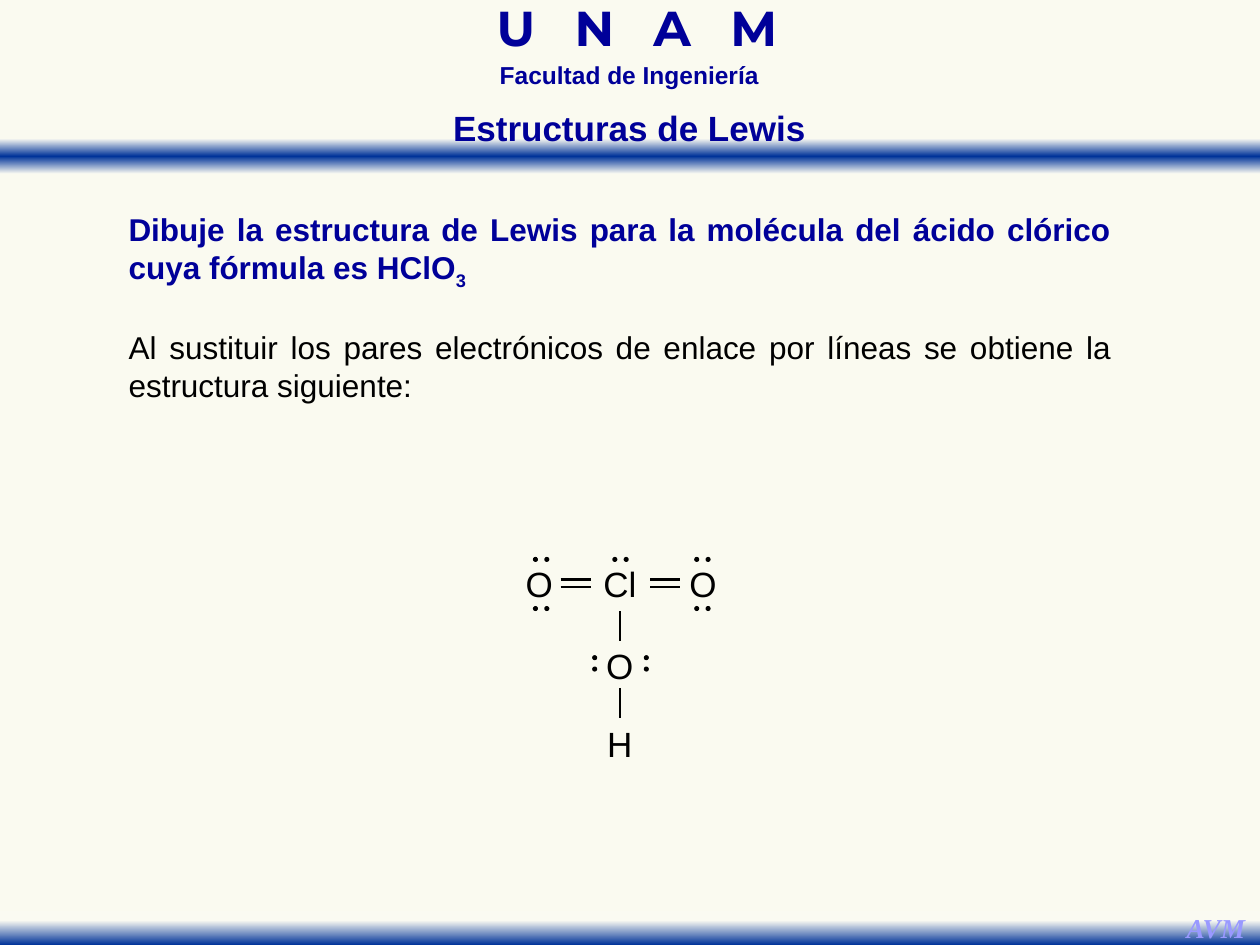
"""Build the Lewis structure slide for chloric acid."""
from dataclasses import dataclass
from typing import NamedTuple

from lxml import etree
from pptx import Presentation
from pptx import oxml
from pptx.dml.color import RGBColor
from pptx.enum import shapes, text
from pptx.oxml import ns
from pptx.util import Inches, Pt


@dataclass(frozen=True)
class Theme:
    paper: str = "FAFAF0"
    pale: str = "FAFAF2"
    blue: str = "003399"
    navy: str = "000099"
    lilac: str = "9999FF"
    ink: str = "000000"
    sans: str = "Arial"
    logo: str = "Montserrat"
    serif: str = "Times New Roman"
    big: float = 28
    head: float = 20
    body: float = 18
    small: float = 14
    sign: float = 15.6
    line: float = 1.5


class Box(NamedTuple):
    x: float
    y: float
    w: float
    h: float


class Face(NamedTuple):
    name: str
    size: float
    color: str
    bold: bool = False
    slant: bool = False


class Label(NamedTuple):
    words: str
    box: Box
    face: Face
    lead: float = 1.0


class Atom(NamedTuple):
    name: str
    x: float
    y: float


class Pair(NamedTuple):
    x: float
    y: float
    dx: float = 0.09
    dy: float = 0


class Bond(NamedTuple):
    x: float
    y: float
    dx: float
    dy: float


T = Theme()
MARK = Face(T.logo, T.big, T.navy, True)
UNIT = Face(T.sans, T.small, T.navy, True)
SIGN = Face(T.serif, T.sign, T.lilac, True, True)
HEAD = Face(T.sans, T.head, T.navy, True)
TASK = Face(T.sans, T.body, T.navy, True)
NOTE = Face(T.sans, T.body, T.ink)
ATOM = Face(T.sans, T.head, T.ink)

DOT = 0.04
BANDS = [
    (Box(0, 1.1, 10, 0.28), [(0, T.pale), (50, T.blue), (100, T.pale)]),
    (Box(0, 7.23, 10, 0.27), [(28, T.pale), (100, T.blue)]),
]
UNAM = Label("U N A M", Box(3.1, 0.06, 3.91, 0.43), MARK, 0.7)
LABELS = [
    Label("Facultad de Ingeniería", Box(3.21, 0.49, 3.57, 0.27), UNIT, 0.7),
    Label("AVM", Box(9.31, 7.18, 0.68, 0.37), SIGN),
]
ATOMS = [
    Atom("O", 4.28, 4.63), Atom("Cl", 4.92, 4.63), Atom("O", 5.58, 4.63),
    Atom("O", 4.92, 5.28), Atom("H", 4.92, 5.9),
]
PAIRS = [Pair(x, y) for x in (4.23, 5.51) for y in (4.42, 4.81)]
PAIRS += [Pair(4.86, 4.42)]
PAIRS += [Pair(x, 5.2, 0, 0.09) for x in (4.7, 5.11)]
BONDS = [Bond(x, y, 0.24, 0) for x in (4.45, 5.16) for y in (4.6, 4.66)]
BONDS += [Bond(4.92, y, 0, 0.24) for y in (4.85, 5.46)]


def rgb(code: str) -> RGBColor:
    return RGBColor.from_string(code)


def place(shape, box: Box) -> None:
    shape.left, shape.top, shape.width, shape.height = map(Inches, box)


def style(font, face: Face) -> None:
    font.name, font.size = face.name, Pt(face.size)
    font.bold, font.italic = face.bold, face.slant
    font.color.rgb = rgb(face.color)


def form(slide, kind, box: Box):
    shape = slide.shapes.add_shape(kind, *map(Inches, box))
    shape.shadow.inherit = False
    shape.line.fill.background()
    return shape


def band(slide, box: Box, stops: list) -> None:
    shape = form(slide, shapes.MSO_SHAPE.RECTANGLE, box)
    steps = "".join(
        f'<a:gs pos="{pos * 1000}"><a:srgbClr val="{code}"/></a:gs>'
        for pos, code in stops)
    fill = oxml.parse_xml(
        f'<a:gradFill {ns.nsdecls("a")}><a:gsLst>{steps}</a:gsLst>'
        '<a:lin ang="5400000" scaled="0"/></a:gradFill>')
    shape._element.spPr.find(ns.qn("a:prstGeom")).addnext(fill)


def label(slide, item: Label):
    shape = slide.shapes.add_textbox(*map(Inches, item.box))
    frame = shape.text_frame
    frame.word_wrap = True
    para = frame.paragraphs[0]
    para.text = item.words
    para.alignment = text.PP_ALIGN.CENTER
    para.line_spacing = item.lead
    style(para.font, item.face)
    return frame


def atom(slide, item: Atom) -> None:
    box = Box(item.x - 0.2, item.y - 0.21, 0.4, 0.42)
    frame = label(slide, Label(item.name, box, ATOM))
    frame.margin_left = frame.margin_right = 0
    frame.margin_top = frame.margin_bottom = 0
    frame.vertical_anchor = text.MSO_ANCHOR.MIDDLE


def pair(slide, item: Pair) -> None:
    for i in range(2):
        box = Box(item.x + i * item.dx, item.y + i * item.dy, DOT, DOT)
        dot = form(slide, shapes.MSO_SHAPE.OVAL, box)
        dot.fill.solid()
        dot.fill.fore_color.rgb = rgb(T.ink)


def bond(slide, item: Bond) -> None:
    ends = (item.x, item.y, item.x + item.dx, item.y + item.dy)
    line = slide.shapes.add_connector(
        shapes.MSO_CONNECTOR.STRAIGHT, *map(Inches, ends))
    line.line.color.rgb = rgb(T.ink)
    line.line.width = Pt(T.line)
    etree.SubElement(line._element.spPr, ns.qn("a:effectLst"))


def title(slide) -> None:
    shape = slide.shapes.title
    place(shape, Box(3.44, 0.79, 3.11, 0.44))
    shape.text_frame.auto_size = text.MSO_AUTO_SIZE.NONE
    para = shape.text_frame.paragraphs[0]
    para.text = "Estructuras de Lewis"
    para.alignment = text.PP_ALIGN.CENTER
    style(para.font, HEAD)
    shape._element.getparent().append(shape._element)


def body(slide) -> None:
    shape = slide.placeholders[1]
    place(shape, Box(0.92, 1.62, 8, 1.58))
    frame = shape.text_frame
    frame.auto_size = text.MSO_AUTO_SIZE.NONE
    task, note = frame.paragraphs[0], frame.add_paragraph()
    for para, face, gap in ((task, TASK, 0), (note, NOTE, 21)):
        para.alignment = text.PP_ALIGN.JUSTIFY
        para.space_before = Pt(gap)
        props = para._p.get_or_add_pPr()
        props.set("marL", "0")
        props.set("indent", "0")
        etree.SubElement(props, ns.qn("a:buNone"))
        style(para.font, face)
    task.add_run().text = ("Dibuje la estructura de Lewis para la molécula "
                           "del ácido clórico cuya fórmula es HClO")
    sub = task.add_run()
    sub.text = "3"
    sub.font._element.set("baseline", "-25000")
    note.add_run().text = ("Al sustituir los pares electrónicos de enlace por "
                           "líneas se obtiene la estructura siguiente:")


def main() -> None:
    deck = Presentation()
    deck.slide_width, deck.slide_height = Inches(10), Inches(7.5)
    slide = deck.slides.add_slide(deck.slide_layouts[1])
    slide.background.fill.solid()
    slide.background.fill.fore_color.rgb = rgb(T.paper)
    for box, stops in BANDS:
        band(slide, box, stops)
    mark = label(slide, UNAM)
    mark.paragraphs[0].runs[0].font._element.set("spc", "730")
    for draw, items in ((label, LABELS), (atom, ATOMS),
                        (pair, PAIRS), (bond, BONDS)):
        for item in items:
            draw(slide, item)
    body(slide)
    title(slide)
    deck.save("out.pptx")


if __name__ == "__main__":
    main()
